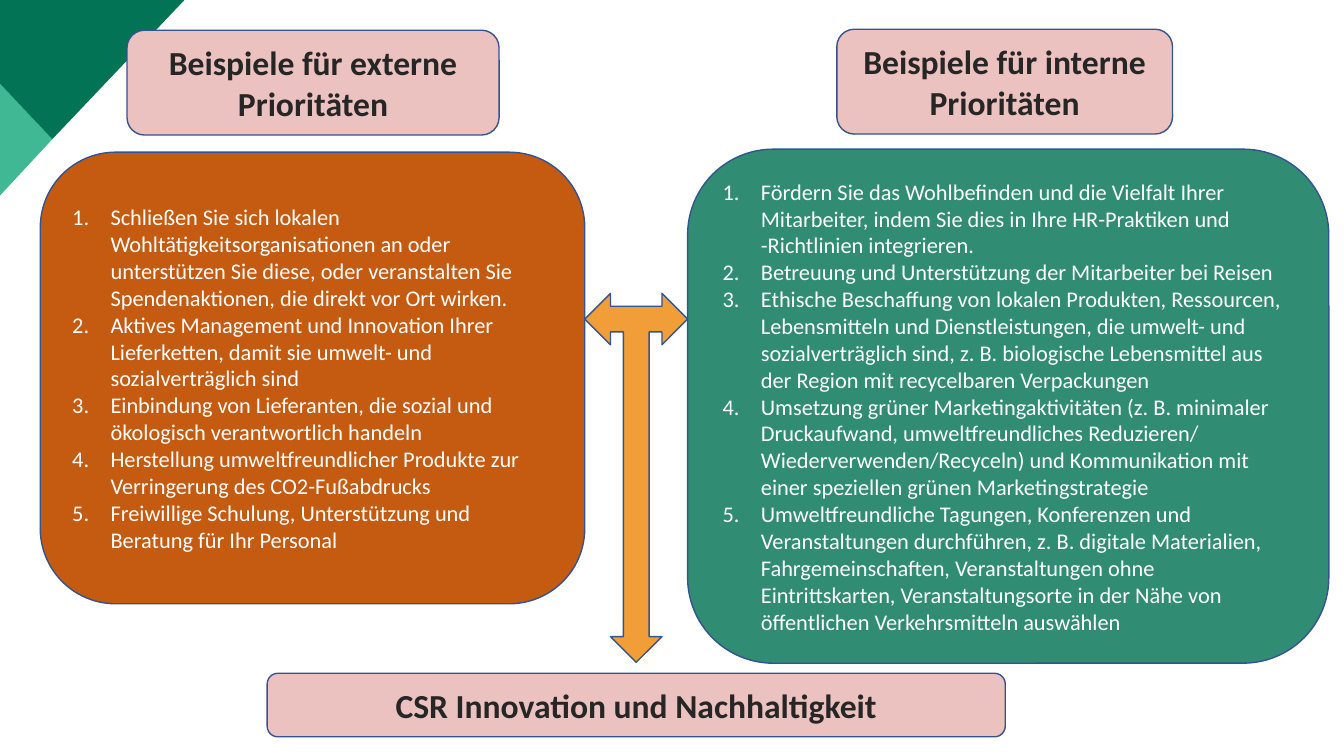
from lxml.etree import SubElement
from pptx import Presentation
from pptx.dml.color import RGBColor
from pptx.enum.shapes import MSO_SHAPE as Shape
from pptx.enum.text import MSO_ANCHOR as Anchor, PP_ALIGN as Align
from pptx.oxml.ns import qn
from pptx.util import Inches, Pt

COLORS = {
    "dark": "027354", "mint": "40B894", "pink": "EBC2BF", "rust": "C55A11",
    "green": "308C73", "gold": "F29E38", "edge": "325491",
    "ink": "262626", "white": "FFFFFF",
}

deck = Presentation()
deck.slide_width, deck.slide_height = Inches(13.33), Inches(7.5)
slide = deck.slides.add_slide(deck.slide_layouts[6])


def color(name):
    return RGBColor.from_string(COLORS[name])


def add_block(kind, place, fill, lines=(), size=24, ink="ink", listed=False):
    """Add an outlined shape with a centred heading or a numbered list."""
    block = slide.shapes.add_shape(kind, *[Inches(n) for n in place])
    block.shadow.inherit = False
    block.fill.solid()
    block.fill.fore_color.rgb = color(fill)
    block.line.color.rgb = color("edge")
    block.line.width = Pt(1)
    frame = block.text_frame
    frame.word_wrap = True
    frame.vertical_anchor = Anchor.MIDDLE
    for i, line in enumerate(lines):
        para = frame.paragraphs[0] if i == 0 else frame.add_paragraph()
        para.text = line
        para.alignment = Align.LEFT if listed else Align.CENTER
        if listed:
            props = para._p.get_or_add_pPr()
            props.set("marL", str(Inches(0.38)))
            props.set("indent", str(Inches(-0.38)))
            SubElement(props, qn("a:buFont"), typeface="Calibri")
            SubElement(props, qn("a:buAutoNum"), type="arabicPeriod")
        font = para.font
        font.name, font.size, font.bold = "Calibri", Pt(size), not listed
        font.color.rgb = color(ink)
    return block


# Corner
corner = [
    ("mint", [(0, 0.83), (0.52, 1.38), (0, 1.94)]),
    ("dark", [(0, 0), (1.83, 0), (0.52, 1.38), (0, 0.83)]),
]
for fill, points in corner:
    dots = [(Inches(x), Inches(y)) for x, y in points]
    path = slide.shapes.build_freeform(*dots[0])
    path.add_line_segments(dots[1:], close=True)
    wedge = path.convert_to_shape()
    wedge.shadow.inherit = False
    wedge.fill.solid()
    wedge.fill.fore_color.rgb = color(fill)
    wedge.line.fill.background()

# Lists
outer = [
    "Schließen Sie sich lokalen Wohltätigkeitsorganisationen an oder "
    "unterstützen Sie diese, oder veranstalten Sie Spendenaktionen, "
    "die direkt vor Ort wirken.",
    "Aktives Management und Innovation Ihrer Lieferketten, damit sie "
    "umwelt- und sozialverträglich sind",
    "Einbindung von Lieferanten, die sozial und ökologisch "
    "verantwortlich handeln",
    "Herstellung umweltfreundlicher Produkte zur Verringerung des "
    "CO2-Fußabdrucks",
    "Freiwillige Schulung, Unterstützung und Beratung für Ihr Personal",
]
inner = [
    "Fördern Sie das Wohlbefinden und die Vielfalt Ihrer Mitarbeiter, "
    "indem Sie dies in Ihre HR-Praktiken und -Richtlinien integrieren.",
    "Betreuung und Unterstützung der Mitarbeiter bei Reisen",
    "Ethische Beschaffung von lokalen Produkten, Ressourcen, "
    "Lebensmitteln und Dienstleistungen, die umwelt- und "
    "sozialverträglich sind, z. B. biologische Lebensmittel aus der "
    "Region mit recycelbaren Verpackungen",
    "Umsetzung grüner Marketingaktivitäten (z. B. minimaler "
    "Druckaufwand, umweltfreundliches Reduzieren/ "
    "Wiederverwenden/Recyceln) und Kommunikation mit einer speziellen "
    "grünen Marketingstrategie",
    "Umweltfreundliche Tagungen, Konferenzen und Veranstaltungen "
    "durchführen, z. B. digitale Materialien, Fahrgemeinschaften, "
    "Veranstaltungen ohne Eintrittskarten, Veranstaltungsorte in der "
    "Nähe von öffentlichen Verkehrsmitteln auswählen",
]
for place, fill, lines in [
    ((0.4, 1.51, 5.4, 4.48), "rust", outer),
    ((6.82, 1.48, 6.36, 5.1), "green", inner),
]:
    add_block(Shape.ROUNDED_RECTANGLE, place, fill, lines, 16, "white", True)

# Arrow
arrow = add_block(Shape.LEFT_RIGHT_UP_ARROW, (5.8, 2.91, 1.02, 3.66), "gold")
arrow.rotation = 180

# Headings
for place, text in [
    ((1.26, 0.3, 3.69, 1.04), "Beispiele für externe Prioritäten"),
    ((8.3, 0.29, 3.33, 1.04), "Beispiele für interne Prioritäten"),
    ((2.65, 6.68, 7.32, 0.63), "CSR Innovation und Nachhaltigkeit"),
]:
    add_block(Shape.ROUNDED_RECTANGLE, place, "pink", [text])

deck.save("out.pptx")
